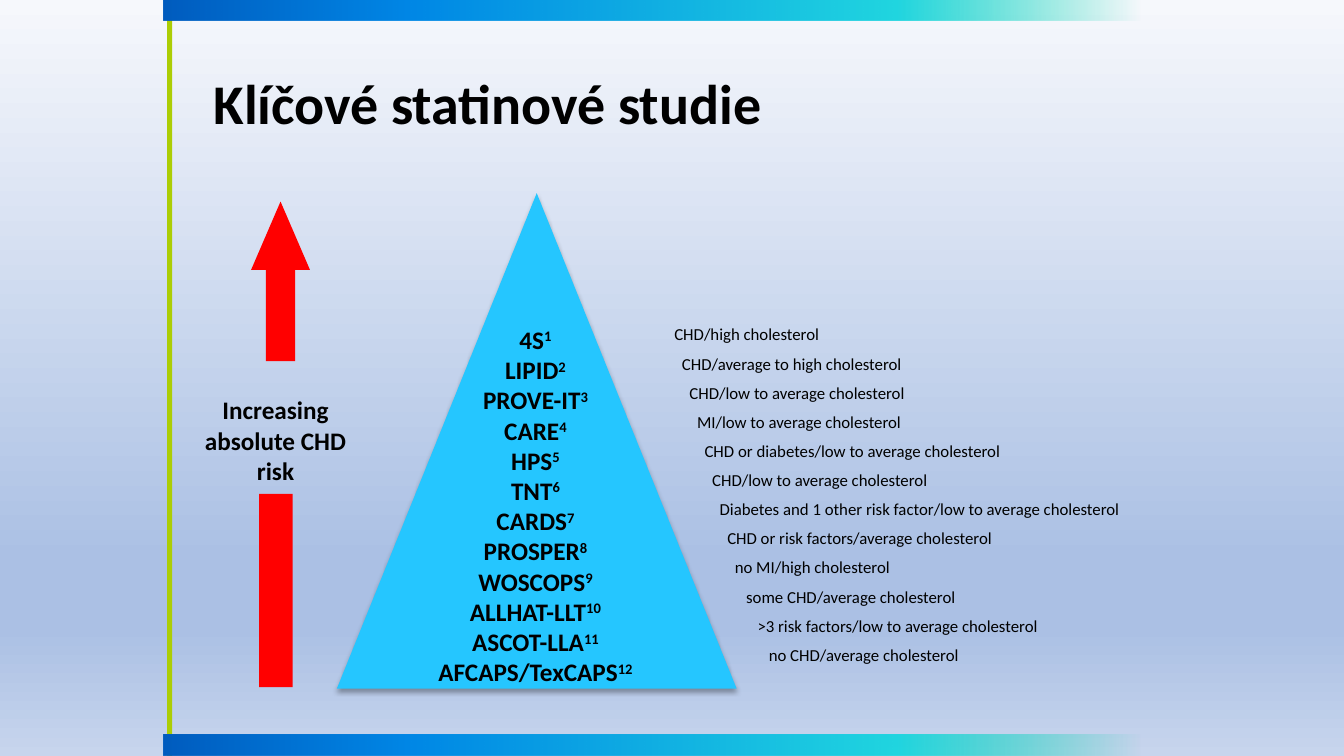
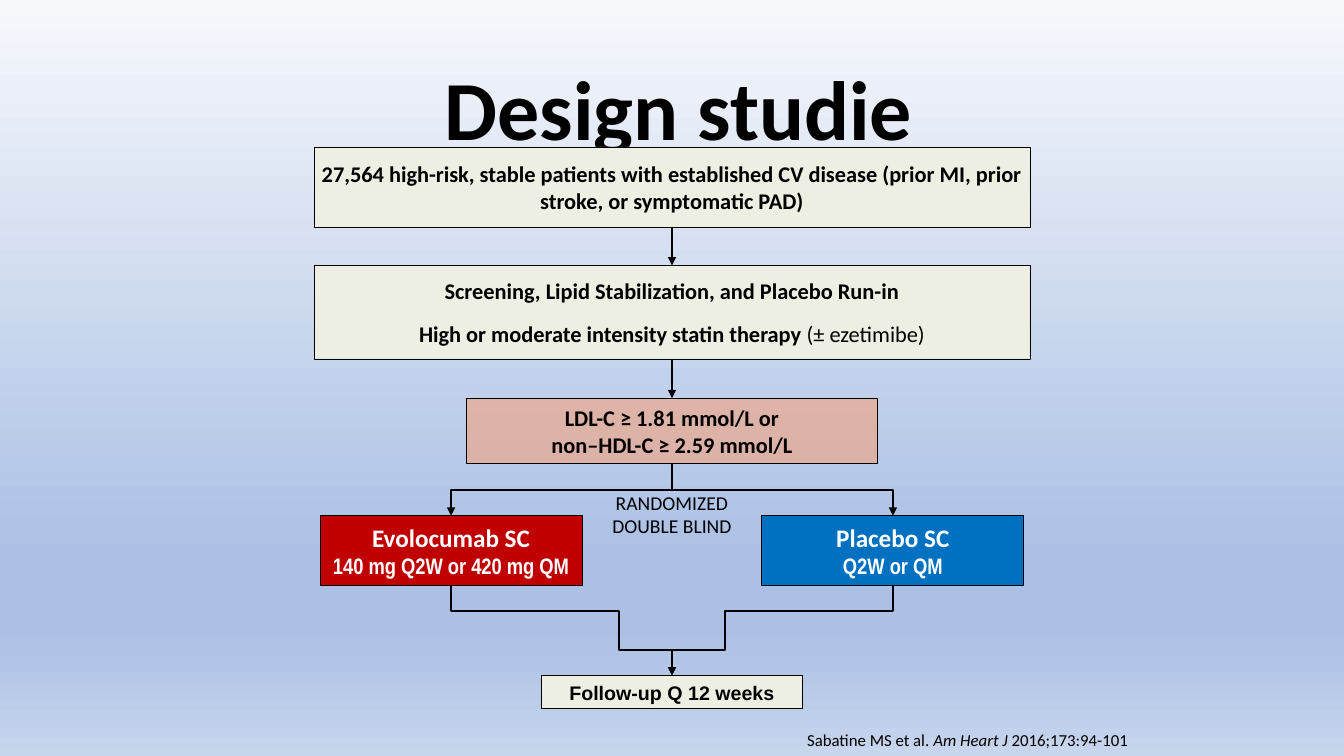
"""Builds two slides on statin trials: a risk pyramid and a study flow chart."""
from dataclasses import dataclass
from typing import Any, NamedTuple

from lxml import etree
from pptx import Presentation, dml, util as u
from pptx.dml import color, fill as dml_fill
from pptx.enum import shapes, text
from pptx.oxml import ns
from pptx.shapes import autoshape, connector
from pptx.slide import Slide
from pptx.text import text as tx

COLS, ROWS = 160, 90
CELL = u.Inches(1) / 12
MID = COLS / 2
BLACK, WHITE, RED, LIME, SKY = "000000", "FFFFFF", "FF0000", "ACCD05", "25C6FF"
CREAM, CORAL, CRIMSON, BLUE = "ECEFE2", "FF9966", "C00000", "0070C0"
SHAPE = shapes.MSO_SHAPE
CENTER, LEFT = text.PP_ALIGN.CENTER, text.PP_ALIGN.LEFT
MIDDLE, TOP = text.MSO_ANCHOR.MIDDLE, text.MSO_ANCHOR.TOP


class Stop(NamedTuple):
    pos: int
    color: str
    alpha: int = 100


class Box(NamedTuple):
    x: float
    y: float
    w: float
    h: float


@dataclass(frozen=True)
class Run:
    text: str
    size: float | None = None
    font: str | None = None
    bold: bool | None = None
    italic: bool = False
    raised: bool = False


@dataclass(frozen=True)
class Para:
    runs: tuple[Run, ...]
    before: float = 0
    indent: float = 0


@dataclass(frozen=True)
class Step:
    center: float
    top: float
    width: float
    height: float
    fill: str
    paras: tuple[Para, ...]
    size: float = 16
    font: str = "Calibri"
    ink: str = BLACK
    bold: bool = True
    line: float = 0.75
    alpha: int = 100
    inset: float = 0.05

    @property
    def box(self) -> Box:
        return Box(self.center - self.width / 2, self.top, self.width, self.height)

    @property
    def bottom(self) -> float:
        return self.top + self.height


SKY_FADE = (Stop(0, "F6F8FC"), Stop(74, "ABC0E4"), Stop(83, "ABC0E4"), Stop(100, "C7D5ED"))
BAND_FADE = (Stop(0, "005CBF"), Stop(25, "0087E6"), Stop(75, "21D6E0"), Stop(100, "03D4A8", 0))

TRIALS = (
    ("4S", "CHD/high cholesterol"),
    ("LIPID", "CHD/average to high cholesterol"),
    ("PROVE-IT", "CHD/low to average cholesterol"),
    ("CARE", "MI/low to average cholesterol"),
    ("HPS", "CHD or diabetes/low to average cholesterol"),
    ("TNT", "CHD/low to average cholesterol"),
    ("CARDS", "Diabetes and 1 other risk factor/low to average cholesterol"),
    ("PROSPER", "CHD or risk factors/average cholesterol"),
    ("WOSCOPS", "no MI/high cholesterol"),
    ("ALLHAT-LLT", "some CHD/average cholesterol"),
    ("ASCOT-LLA", ">3 risk factors/low to average cholesterol"),
    ("AFCAPS/TexCAPS", "no CHD/average cholesterol"),
)


def rgb(value: str) -> color.RGBColor:
    return color.RGBColor.from_string(value)


def cells(*values: float) -> list[u.Emu]:
    return [u.Emu(round(v * CELL)) for v in values]


def child(parent: Any, tag: str, **attrs: Any) -> Any:
    return etree.SubElement(parent, ns.qn(tag), {k: str(v) for k, v in attrs.items()})


def para(value: str, before: float = 0, indent: float = 0, **fmt: Any) -> Para:
    return Para((Run(value, **fmt),), before, indent)


def fade(fill: dml_fill.FillFormat, element: Any, stops: tuple[Stop, ...], angle: float) -> None:
    fill.gradient()
    fill.gradient_angle = angle
    gs_list = next(element.iter(ns.qn("a:gsLst")))
    for old in list(gs_list):
        gs_list.remove(old)
    for stop in stops:
        gs = child(gs_list, "a:gs", pos=stop.pos * 1000)
        clr = child(gs, "a:srgbClr", val=stop.color)
        if stop.alpha < 100:
            child(clr, "a:alpha", val=stop.alpha * 1000)


def write(tf: tx.TextFrame, paras: tuple[Para, ...], *, size: float, font: str = "Calibri",
          ink: str = BLACK, bold: bool = False, align: Any = CENTER, anchor: Any = TOP,
          inset: float = 0.1, wrap: bool = True, spacing: float = 1.0) -> None:
    tf.word_wrap, tf.vertical_anchor = wrap, anchor
    tf.margin_left = tf.margin_right = u.Inches(inset)
    tf.margin_top = tf.margin_bottom = u.Inches(0.05)
    for i, item in enumerate(paras):
        p = tf.add_paragraph() if i else tf.paragraphs[0]
        p.alignment, p.line_spacing, p.space_before = align, spacing, u.Pt(item.before)
        if item.indent:
            p._p.get_or_add_pPr().set("marL", str(cells(item.indent)[0]))
        for run in item.runs:
            r = p.add_run()
            r.text = run.text
            r.font.name, r.font.size = run.font or font, u.Pt(run.size or size)
            r.font.bold = bold if run.bold is None else run.bold
            r.font.italic = run.italic
            r.font.color.rgb = rgb(ink)
            if run.raised:
                r._r.get_or_add_rPr().set("baseline", "30000")


def add_text(s: Slide, box: Box, *paras: Para, **fmt: Any) -> None:
    write(s.shapes.add_textbox(*cells(*box)).text_frame, paras, **fmt)


def add_title(s: Slide, box: Box, value: str, size: float, align: Any) -> None:
    add_text(s, box, para(value), size=size, bold=True, align=align, anchor=MIDDLE, spacing=0.9)


def add_shape(s: Slide, kind: Any, box: Box, fill: str | tuple[Stop, ...],
              line: float = 0, alpha: int = 100) -> autoshape.Shape:
    sp = s.shapes.add_shape(kind, *cells(*box))
    sp.shadow.inherit = False
    if isinstance(fill, str):
        sp.fill.solid()
        sp.fill.fore_color.rgb = rgb(fill)
        if alpha < 100:
            child(next(sp.element.spPr.iter(ns.qn("a:srgbClr"))), "a:alpha", val=alpha * 1000)
    else:
        fade(sp.fill, sp.element, fill, 0)
    if line:
        sp.line.color.rgb, sp.line.width = rgb(BLACK), u.Pt(line)
    else:
        sp.line.fill.background()
    return sp


def add_step(s: Slide, step: Step) -> autoshape.Shape:
    sp = add_shape(s, SHAPE.RECTANGLE, step.box, step.fill, step.line, step.alpha)
    write(sp.text_frame, step.paras, size=step.size, font=step.font, ink=step.ink,
          bold=step.bold, anchor=MIDDLE, inset=step.inset)
    return sp


def style_arrow(cxn: connector.Connector) -> None:
    cxn.line.color.rgb, cxn.line.width = rgb(BLACK), u.Pt(1.5)
    child(cxn.line._get_or_add_ln(), "a:tailEnd", type="triangle")
    child(cxn.element.spPr, "a:effectLst")


def join(s: Slide, upper: autoshape.Shape, lower: autoshape.Shape) -> None:
    cxn = s.shapes.add_connector(shapes.MSO_CONNECTOR.STRAIGHT, 0, 0, 0, 0)
    cxn.begin_connect(upper, 2)
    cxn.end_connect(lower, 0)
    style_arrow(cxn)


def add_elbow(s: Slide, x0: float, y0: float, x1: float, y1: float, *bends: float) -> None:
    """Draw a downward elbow whose bends are shares of its drop and its span in turn."""
    drop, span = y1 - y0, abs(x1 - x0)
    left, top = (x0 + x1 - drop) / 2, (y0 + y1 - span) / 2
    cxn = s.shapes.add_connector(shapes.MSO_CONNECTOR.ELBOW,
                                 *cells(left, top, left + drop, top + span))
    xfrm = cxn.element.spPr.find(ns.qn("a:xfrm"))
    xfrm.set("rot", str((270 if x1 > x0 else 90) * 60000))
    if x1 > x0:
        xfrm.set("flipH", "1")
    geom = cxn.element.spPr.find(ns.qn("a:prstGeom"))
    geom.set("prst", f"bentConnector{len(bends) + 2}")
    for i, bend in enumerate(bends, 1):
        child(geom.find(ns.qn("a:avLst")), "a:gd", name=f"adj{i}", fmla=f"val {round(bend * 100000)}")
    style_arrow(cxn)


def add_slide(prs: Any) -> Slide:
    s = prs.slides.add_slide(prs.slide_layouts[6])
    fade(s.background.fill, s.element, SKY_FADE, 270)
    return s


def build_pyramid(s: Slide) -> None:
    add_title(s, Box(24.24, 5.9, 128.4, 13.5), "Klíčové statinové studie", 40, LEFT)
    add_shape(s, SHAPE.RECTANGLE, Box(19.9, 0, 0.6, ROWS), LIME)
    band_height = 2.5
    for top in (0, ROWS - band_height):
        add_shape(s, SHAPE.RECTANGLE, Box(19.5, top, 116.3, band_height), BAND_FADE)

    populations = [para(population, 6.4 if i else 0, 0.45 * (2 * i + max(0, i - 8)))
                   for i, (_, population) in enumerate(TRIALS)]
    add_text(s, Box(79.1, 38, 78, 47.4), *populations, size=12, align=LEFT)

    arrow = add_shape(s, SHAPE.UP_ARROW, Box(29.9, 24, 7, 19), RED)
    arrow.adjustments[0], arrow.adjustments[1] = 0.5, 1.16
    add_shape(s, SHAPE.RECTANGLE, Box(30.85, 58.8, 4, 23), RED)
    add_text(s, Box(22.3, 46.4, 21, 12), para("Increasing absolute CHD risk"), size=18, bold=True)

    pyramid = add_shape(s, SHAPE.ISOSCELES_TRIANGLE, Box(40.1, 23, 47.6, 59), SKY)
    effects = pyramid.element.spPr.find(ns.qn("a:effectLst"))
    shadow = child(effects, "a:outerShdw", blurRad=u.Pt(3.5), dist=u.Pt(2.2), dir=90 * 60000)
    child(child(shadow, "a:srgbClr", val=BLACK), "a:alpha", val=32000)
    names = [Para((Run(name), Run(str(i), raised=True))) for i, (name, _) in enumerate(TRIALS, 1)]
    add_text(s, Box(50.5, 38, 26.5, 47.3), *names, size=18, bold=True, wrap=False)


def build_design(s: Slide) -> None:
    add_title(s, Box(11.8, 4.8, 138, 17.4), "Design studie", 60, CENTER)
    patients = Step(MID, 17.5, 85.2, 9.5, CREAM, (
        para("27,564 high-risk, stable patients with established CV disease "
             "(prior MI, prior stroke, or symptomatic PAD)"),), line=0.13)
    screening = Step(MID, 31.6, 85.2, 11.1, CREAM, (
        para("Screening, Lipid Stabilization, and Placebo Run-in"),
        Para((Run("High or moderate intensity statin therapy "),
              Run("(± ezetimibe)", bold=False)), before=11)), line=0.13)
    criteria = Step(MID, 47.4, 49, 7.8, CORAL, (
        para("LDL-C ≥ 1.81 mmol/L or"), para("non–HDL-C ≥ 2.59 mmol/L")), alpha=50, inset=0.1)
    follow_up = Step(MID, 80.4, 31, 4, CREAM, (para("Follow-up Q 12 weeks"),),
                     size=14, font="Arial")
    arms = [Step(MID + side * 26.3, 61.4, 31.2, 8.3, fill,
                 (para(name), para(dose, size=16, font="Arial Narrow")),
                 size=18, ink=WHITE, inset=0.04)
            for side, fill, name, dose in (
                (-1, CRIMSON, "Evolocumab SC", "140 mg Q2W or 420 mg QM"),
                (1, BLUE, "Placebo SC", "Q2W or QM"))]

    top, run_in, threshold = [add_step(s, step) for step in (patients, screening, criteria)]
    join(s, top, run_in)
    join(s, run_in, threshold)
    add_step(s, follow_up)
    for arm in arms:
        add_step(s, arm)
        add_elbow(s, MID, criteria.bottom, arm.center, arm.top, 0.5)
        add_elbow(s, arm.center, arm.bottom, MID, follow_up.top, 0.28, 0.76, 0.72)
    add_text(s, Box(63.1, 57.8, 33.8, 6.8), para("RANDOMIZED"), para("DOUBLE BLIND"), size=14)
    add_text(s, Box(94.9, 86.3, 41.2, 3.6), Para((
        Run("Sabatine MS et al. "), Run("Am Heart J ", italic=True), Run("2016;173:94-101"))),
        size=12, align=LEFT, wrap=False)


def main() -> None:
    prs = Presentation()
    prs.slide_width, prs.slide_height = cells(COLS, ROWS)
    build_pyramid(add_slide(prs))
    build_design(add_slide(prs))
    prs.save("out.pptx")


if __name__ == "__main__":
    main()
